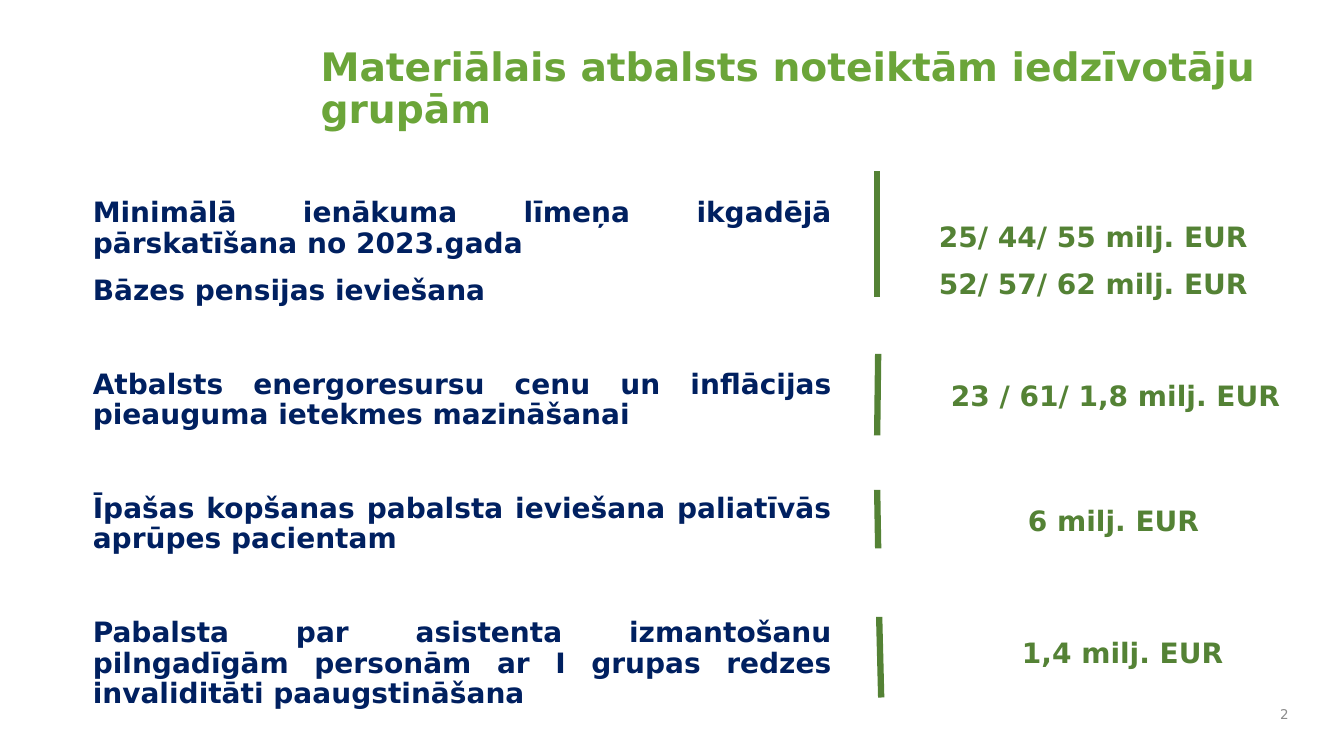
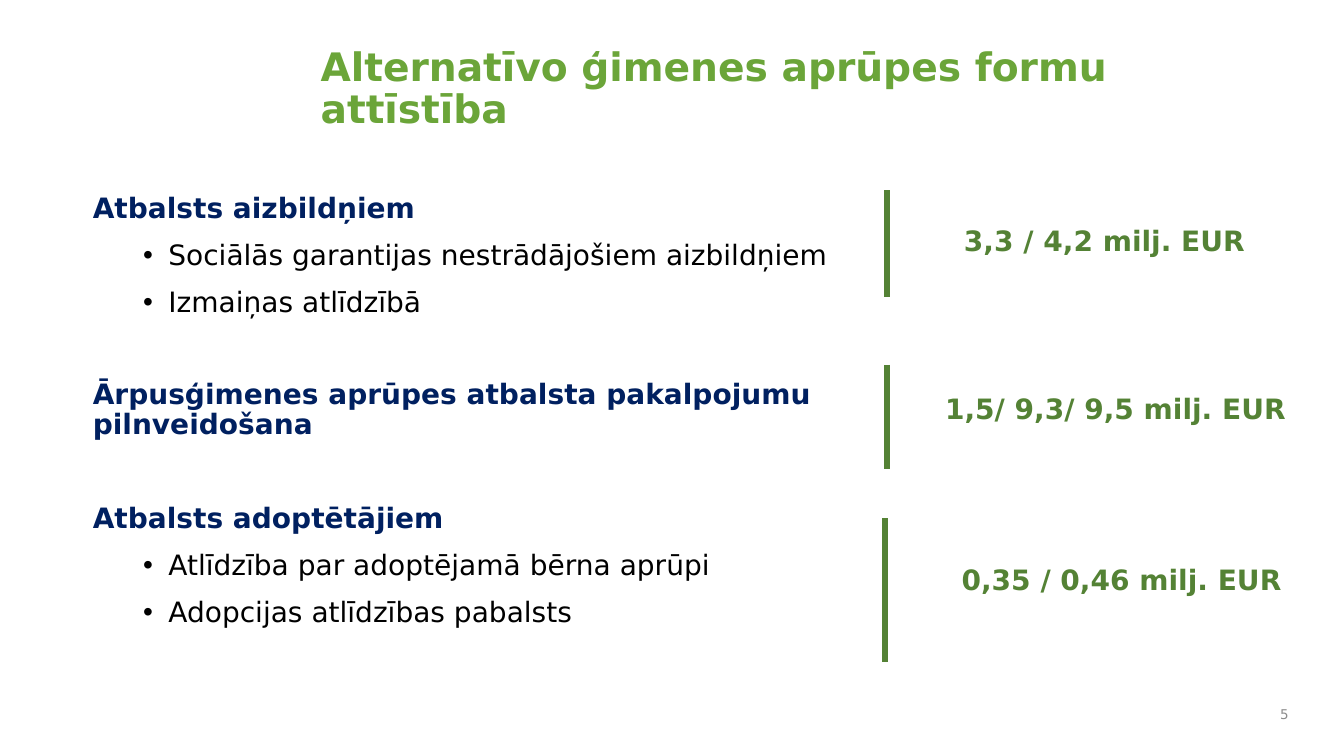
from dataclasses import dataclass

from lxml.etree import SubElement
from pptx import Presentation
from pptx.dml.color import RGBColor
from pptx.enum.shapes import MSO_CONNECTOR
from pptx.enum.text import MSO_ANCHOR, MSO_AUTO_SIZE, PP_ALIGN
from pptx.oxml.ns import qn
from pptx.util import Inches, Pt


@dataclass(frozen=True)
class Theme:
    font: str = "DejaVu Sans"
    title: str = "6BA539"
    topic: str = "002060"
    detail: str = "000000"
    amount: str = "548235"
    number: str = "8C8C8C"
    title_size: float = 28
    text_size: float = 20
    number_size: float = 9.6
    line_spacing: float = 0.9
    gap: float = 12
    wide_gap: float = 43.6
    section_gap: float = 45.6
    rule_width: float = 4.5


THEME = Theme()

# Paragraph styles
STYLES = {
    "topic": {"size": THEME.text_size, "color": THEME.topic, "bold": True, "align": PP_ALIGN.JUSTIFY},
    "left topic": {"size": THEME.text_size, "color": THEME.topic, "bold": True, "align": PP_ALIGN.LEFT},
    "detail": {"size": THEME.text_size, "color": THEME.detail, "bold": False,
               "align": PP_ALIGN.JUSTIFY, "bullet": True},
    "amount": {"size": THEME.text_size, "color": THEME.amount, "bold": True, "align": PP_ALIGN.CENTER},
    "title": {"size": THEME.title_size, "color": THEME.title, "bold": True, "align": PP_ALIGN.LEFT},
    "number": {"size": THEME.number_size, "color": THEME.number, "bold": False,
               "align": PP_ALIGN.RIGHT, "spacing": 1.0},
}

# Shared places, in inches
TITLE_AREA = (3.08, 0.42, 9.92, 1.13)
NUMBER_AREA = (12.44, 6.92, 0.44, 0.33)
BODY_LEFT, BODY_WIDTH, BODY_BOTTOM = 0.82, 7.53, 7.25
AMOUNT_WIDTH, AMOUNT_HEIGHT = 3.87, 1.0

# Content: body lines are (style, space before, text); amounts are (left, top, lines);
# rules are (from x, from y, to x, to y)
PAGES = [
    {
        "title": "Materiālais atbalsts noteiktām iedzīvotāju grupām",
        "number": "2",
        "body_top": 1.92,
        "body": [
            ("topic", 0, "Minimālā ienākuma līmeņa ikgadējā pārskatīšana no 2023.gada"),
            ("topic", THEME.gap, "Bāzes pensijas ieviešana"),
            ("topic", THEME.section_gap,
             "Atbalsts energoresursu cenu un inflācijas pieauguma ietekmes mazināšanai"),
            ("topic", THEME.section_gap,
             "Īpašas kopšanas pabalsta ieviešana paliatīvās aprūpes pacientam"),
            ("topic", THEME.section_gap,
             "Pabalsta par asistenta izmantošanu pilngadīgām personām ar I grupas redzes "
             "invaliditāti paaugstināšana"),
        ],
        "amounts": [
            (8.91, 2.17, ["25/ 44/ 55 milj. EUR", "52/ 57/ 62 milj. EUR"]),
            (9.13, 3.74, ["23 / 61/ 1,8 milj. EUR"]),
            (9.11, 4.98, ["6 milj. EUR"]),
            (9.2, 6.29, ["1,4 milj. EUR"]),
        ],
        "rules": [
            (8.7, 1.7, 8.7, 2.95),
            (8.71, 3.51, 8.7, 4.32),
            (8.7, 4.86, 8.71, 5.44),
            (8.72, 6.12, 8.74, 6.92),
        ],
    },
    {
        "title": "Alternatīvo ģimenes aprūpes formu attīstība",
        "number": "5",
        "body_top": 1.88,
        "body": [
            ("topic", 0, "Atbalsts aizbildņiem"),
            ("detail", THEME.gap, "Sociālās garantijas nestrādājošiem aizbildņiem"),
            ("detail", THEME.gap, "Izmaiņas atlīdzībā"),
            ("left topic", THEME.wide_gap, "Ārpusģimenes aprūpes atbalsta pakalpojumu pilnveidošana"),
            ("topic", THEME.section_gap, "Atbalsts adoptētājiem"),
            ("detail", THEME.gap, "Atlīdzība par adoptējamā bērna aprūpi"),
            ("detail", THEME.gap, "Adopcijas atlīdzības pabalsts"),
        ],
        "amounts": [
            (9.02, 2.21, ["3,3 / 4,2 milj. EUR"]),
            (9.13, 3.87, ["1,5/ 9,3/ 9,5 milj. EUR"]),
            (9.19, 5.57, ["0,35 / 0,46 milj. EUR"]),
        ],
        "rules": [
            (8.8, 1.89, 8.8, 2.95),
            (8.8, 3.62, 8.8, 4.65),
            (8.78, 5.14, 8.78, 6.57),
        ],
    },
]


def place(shape, area):
    for name, value in zip(("left", "top", "width", "height"), area):
        setattr(shape, name, Inches(value))


def set_bullet(para, bulleted):
    """Give the paragraph a hanging bullet, or clear the template's one."""
    properties = para._p.get_or_add_pPr()
    margin, indent = (Inches(0.75), Inches(-0.25)) if bulleted else (0, 0)
    properties.set("marL", str(int(margin)))
    properties.set("indent", str(int(indent)))
    if bulleted:
        SubElement(properties, qn("a:buFont"), typeface="Arial")
        SubElement(properties, qn("a:buChar"), char="•")
    else:
        SubElement(properties, qn("a:buNone"))


def write(box, lines, anchor=MSO_ANCHOR.TOP):
    """Fill a box with (style, space before, text) lines."""
    frame = box.text_frame
    frame.word_wrap = True
    frame.auto_size = MSO_AUTO_SIZE.NONE
    frame.vertical_anchor = anchor
    for index, (style_name, space_before, text) in enumerate(lines):
        style = STYLES[style_name]
        para = frame.add_paragraph() if index else frame.paragraphs[0]
        set_bullet(para, style.get("bullet", False))
        layout = {
            "alignment": style["align"],
            "line_spacing": style.get("spacing", THEME.line_spacing),
            "space_before": Pt(space_before),
            "space_after": Pt(0),
        }
        for name, value in layout.items():
            setattr(para, name, value)
        span = para.add_run()
        span.text = text
        look = {"name": THEME.font, "size": Pt(style["size"]), "bold": style["bold"]}
        for name, value in look.items():
            setattr(span.font, name, value)
        span.font.color.rgb = RGBColor.from_string(style["color"])


def add_text(page, area, lines, anchor=MSO_ANCHOR.TOP):
    box = page.shapes.add_textbox(*map(Inches, area))
    write(box, lines, anchor)


def add_rule(page, ends):
    rule = page.shapes.add_connector(MSO_CONNECTOR.STRAIGHT, *map(Inches, ends))
    rule.line.color.rgb = RGBColor.from_string(THEME.amount)
    rule.line.width = Pt(THEME.rule_width)
    SubElement(rule._element.spPr, qn("a:effectLst"))


def build_page(deck, content):
    page = deck.slides.add_slide(deck.slide_layouts[1])

    # Title and topics
    title, body = page.placeholders
    place(title, TITLE_AREA)
    write(title, [("title", 0, content["title"])])
    top = content["body_top"]
    place(body, (BODY_LEFT, top, BODY_WIDTH, BODY_BOTTOM - top))
    write(body, content["body"])

    # Amounts beside their rules
    for left, top, amounts in content["amounts"]:
        lines = [("amount", THEME.gap if index else 0, text) for index, text in enumerate(amounts)]
        add_text(page, (left, top, AMOUNT_WIDTH, AMOUNT_HEIGHT), lines)
    for ends in content["rules"]:
        add_rule(page, ends)

    # Page number
    add_text(page, NUMBER_AREA, [("number", 0, content["number"])], MSO_ANCHOR.MIDDLE)


def main():
    deck = Presentation()
    deck.slide_width, deck.slide_height = Inches(13.33), Inches(7.5)
    for content in PAGES:
        build_page(deck, content)
    deck.save("out.pptx")


if __name__ == "__main__":
    main()
